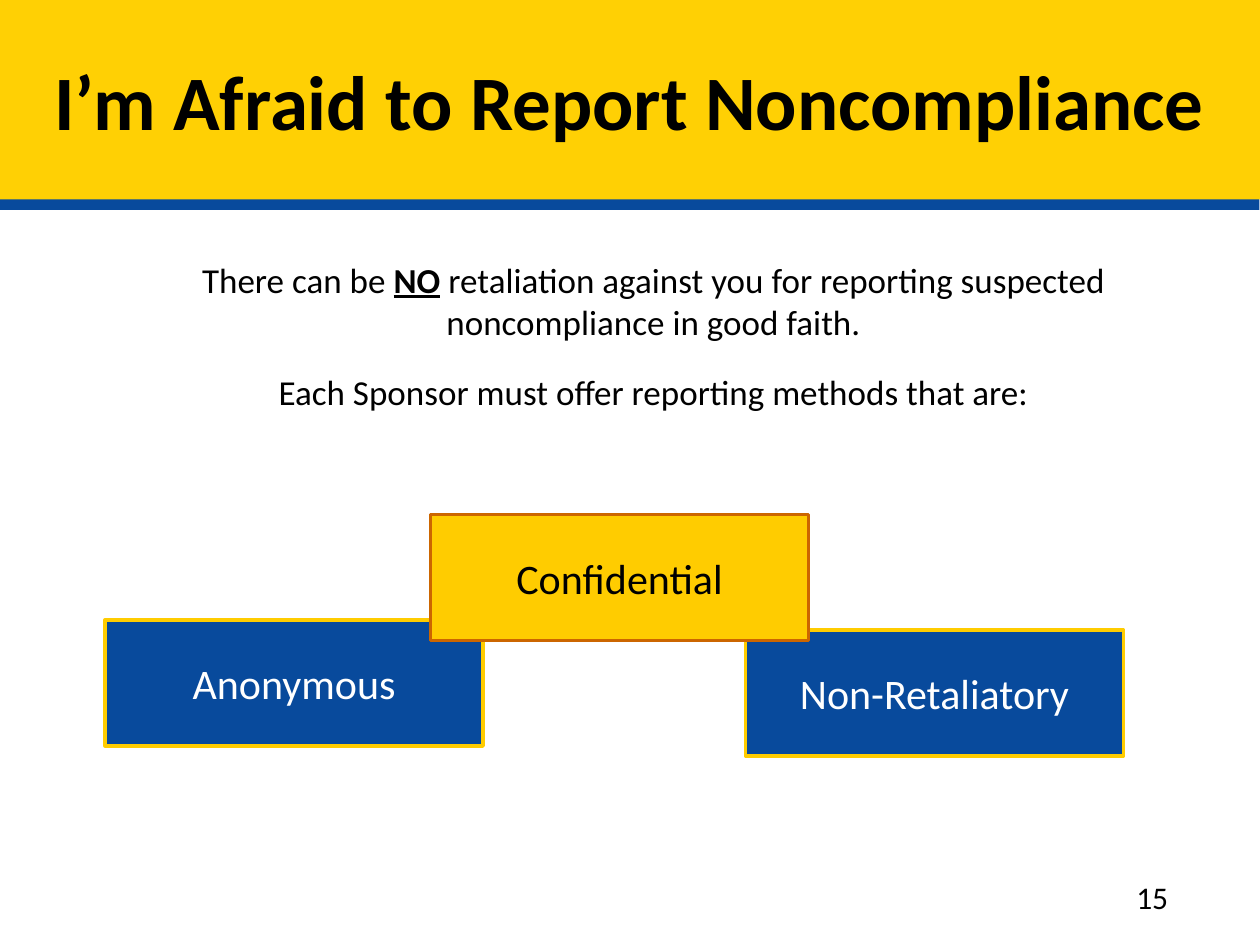
"""Build a slide on reporting noncompliance without fear of retaliation."""
from lxml.etree import SubElement
from pptx import Presentation
from pptx.dml.color import RGBColor
from pptx.enum.shapes import MSO_SHAPE as Shape
from pptx.enum.text import MSO_ANCHOR as Anchor, PP_ALIGN as Align
from pptx.oxml.ns import qn
from pptx.util import Cm, Pt

BLACK = RGBColor(0, 0, 0)
WHITE = RGBColor(255, 255, 255)
BLUE = RGBColor(0x08, 0x4A, 0x9C)
GOLD = RGBColor(0xFF, 0xCC, 0x00)
AMBER = RGBColor(0xFF, 0xD0, 0x04)
RUST = RGBColor(0xCC, 0x66, 0x00)

TITLE = "I’m Afraid to Report Noncompliance"
BODY = [
    ["There can be ", "NO",
     " retaliation against you for reporting suspected noncompliance in good faith."],
    ["Each Sponsor must offer reporting methods that are:"],
]
STRONG = "NO"
BOXES = [
    ("Anonymous", 2.12, 12.5, BLUE, GOLD, WHITE),
    ("Non-Retaliatory", 15.03, 12.7, BLUE, GOLD, WHITE),
    ("Confidential", 8.68, 10.37, GOLD, RUST, BLACK),
]
BOX_W, BOX_H = 7.62, 2.54
PAGE = "15"


def style(para, size, color, align=Align.CENTER, bold=False):
    para.alignment = align
    font = para.font
    font.name, font.size, font.bold = "Calibri", Pt(size), bold
    font.color.rgb = color


def paint(shape, color):
    shape.fill.solid()
    shape.fill.fore_color.rgb = color
    shape.shadow.inherit = False


def add_title(slide):
    title = slide.shapes.title
    title.left, title.top, title.width, title.height = Cm(0), Cm(0), Cm(25.4), Cm(4.02)
    paint(title, AMBER)
    effects = title._element.spPr.find(qn("a:effectLst"))
    shade = SubElement(effects, qn("a:outerShdw"), blurRad="0", dist=str(Pt(6)),
                       dir=str(94 * 60000), algn="t", rotWithShape="0")
    SubElement(shade, qn("a:srgbClr"), val=str(BLUE))
    frame = title.text_frame
    frame.text = TITLE
    frame.vertical_anchor = Anchor.MIDDLE
    style(frame.paragraphs[0], 44, BLACK, bold=True)


def add_body(slide):
    frame = slide.shapes.add_textbox(Cm(1.27), Cm(5.08), Cm(22.86), Cm(11.94)).text_frame
    frame.word_wrap = True
    for i, parts in enumerate(BODY):
        para = frame.add_paragraph() if i else frame.paragraphs[0]
        style(para, 20, BLACK)
        para.space_before, para.space_after = Pt(4), Pt(12)
        para._p.get_or_add_pPr().set("marL", str(Cm(0.95)))
        for part in parts:
            run = para.add_run()
            run.text = part
            if part == STRONG:
                run.font.bold = run.font.underline = True


def add_boxes(slide):
    for label, left, top, fill, line, ink in BOXES:
        box = slide.shapes.add_shape(Shape.RECTANGLE, Cm(left), Cm(top), Cm(BOX_W), Cm(BOX_H))
        paint(box, fill)
        box.line.color.rgb = line
        box.line.width = Pt(2)
        box.text_frame.text = label
        box.text_frame.vertical_anchor = Anchor.MIDDLE
        style(box.text_frame.paragraphs[0], 24, ink)


def add_page(slide):
    frame = slide.shapes.add_textbox(Cm(22.02), Cm(17.58), Cm(1.78), Cm(1.02)).text_frame
    frame.word_wrap = True
    frame.text = PAGE
    style(frame.paragraphs[0], 18, BLACK, Align.RIGHT)


def main():
    deck = Presentation()
    deck.slide_width, deck.slide_height = Cm(25.4), Cm(19.05)
    slide = deck.slides.add_slide(deck.slide_layouts[5])
    for add in (add_body, add_title, add_boxes, add_page):
        add(slide)
    deck.save("out.pptx")


if __name__ == "__main__":
    main()
